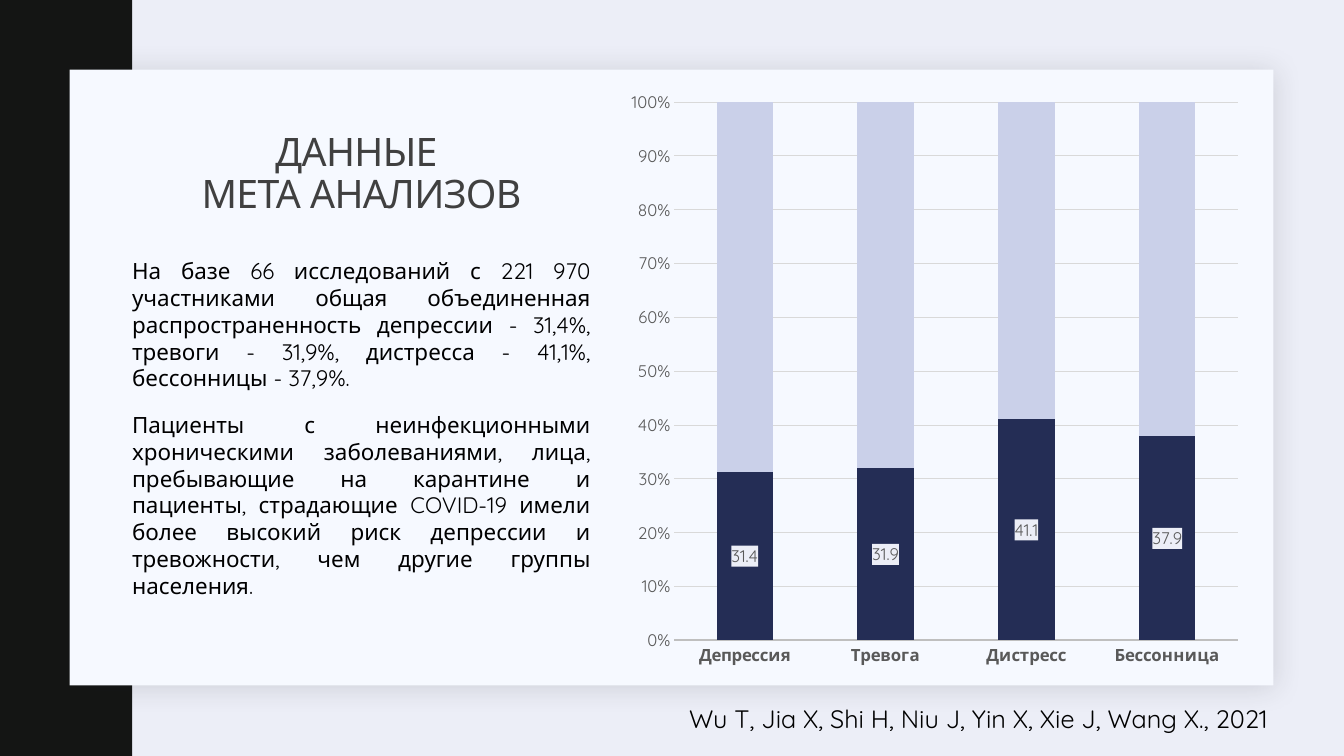
from copy import deepcopy

from lxml import etree
from pptx import Presentation
from pptx.chart.data import CategoryChartData
from pptx.dml.color import RGBColor
from pptx.enum.chart import XL_CHART_TYPE, XL_LABEL_POSITION, XL_TICK_MARK
from pptx.enum.shapes import MSO_SHAPE
from pptx.enum.text import MSO_ANCHOR, MSO_AUTO_SIZE, PP_ALIGN
from pptx.oxml import parse_xml
from pptx.oxml.ns import nsdecls, qn
from pptx.util import Inches, Pt

STACKED = XL_CHART_TYPE.COLUMN_STACKED_100
LABEL_CENTER = XL_LABEL_POSITION.CENTER
NO_TICK = XL_TICK_MARK.NONE
RECTANGLE = MSO_SHAPE.RECTANGLE
TOP, MIDDLE = MSO_ANCHOR.TOP, MSO_ANCHOR.MIDDLE
CENTER, JUSTIFY, RIGHT = PP_ALIGN.CENTER, PP_ALIGN.JUSTIFY, PP_ALIGN.RIGHT
NO_FIT = MSO_AUTO_SIZE.NONE

FONT = "Quicksand"
COLORS = {
    "background": "ECEEF7",
    "band": "141514",
    "card": "F6F9FF",
    "shadow": "1F2125",
    "title": "404040",
    "text": "000000",
    "axis_text": "595959",
    "axis_line": "BFBFBF",
    "grid": "D9D9D9",
    "affected": "242D55",
    "rest": "CAD0E9",
}


def color(name):
    return RGBColor.from_string(COLORS[name])


def write(frame, paragraphs, size, ink, align, anchor=TOP, line=1.0,
          before=0, after=0, spacing=0):
    frame.word_wrap = True
    frame.auto_size = NO_FIT
    frame.vertical_anchor = anchor
    for number, text in enumerate(paragraphs):
        paragraph = frame.add_paragraph() if number else frame.paragraphs[0]
        paragraph.text = text
        paragraph.alignment = align
        paragraph.line_spacing = line
        paragraph.space_before = Pt(before)
        paragraph.space_after = Pt(after)
        properties = paragraph._p.get_or_add_pPr()
        properties.set("marL", "0")
        properties.set("indent", "0")
        etree.SubElement(properties, qn("a:buNone"))
        for run in paragraph.runs:
            run.font.name = FONT
            run.font.size = Pt(size)
            run.font.color.rgb = color(ink)
            run._r.get_or_add_rPr().set("spc", str(spacing))
        for line_break in paragraph._p.findall(qn("a:br")):
            line_break.insert(0, deepcopy(paragraph.runs[0]._r.rPr))


prs = Presentation()
prs.slide_width = Inches(13.33)
prs.slide_height = Inches(7.5)
slide = prs.slides.add_slide(prs.slide_layouts[1])
slide.background.fill.solid()
slide.background.fill.fore_color.rgb = color("background")
title, findings = slide.placeholders

panels = {}
for name, box in (("band", (0, 0, 1.31, 7.5)), ("card", (0.69, 0.69, 11.94, 6.11))):
    panel = slide.shapes.add_shape(RECTANGLE, *map(Inches, box))
    panel.shadow.inherit = False
    panel.fill.solid()
    panel.fill.fore_color.rgb = color(name)
    panel.line.fill.background()
    slide.shapes._spTree.insert(2 + len(panels), panel._element)
    panels[name] = panel

panels["card"]._element.spPr.find(qn("a:effectLst")).append(parse_xml(
    f'<a:outerShdw {nsdecls("a")} blurRad="{Pt(20)}" dist="{Pt(2)}" dir="2700000" '
    f'algn="tl" rotWithShape="0"><a:srgbClr val="{COLORS["shadow"]}">'
    '<a:alpha val="15000"/></a:srgbClr></a:outerShdw>'))

for holder, box in ((title, (1.31, 1.03, 4.55, 1.41)), (findings, (1.31, 2.5, 4.55, 3.97))):
    holder.left, holder.top, holder.width, holder.height = map(Inches, box)

write(title.text_frame, ["ДАННЫЕ \nМЕТА АНАЛИЗОВ"], size=28, ink="title",
      align=CENTER, anchor=MIDDLE, line=0.9, spacing=-50)

findings.text_frame.margin_left = findings.text_frame.margin_right = 0
write(findings.text_frame, [
    "На базе 66 исследований с 221 970 участниками общая объединенная "
    "распространенность депрессии - 31,4%, тревоги - 31,9%, "
    "дистресса - 41,1%, бессонницы - 37,9%. ",
    "Пациенты с неинфекционными хроническими заболеваниями, лица, "
    "пребывающие на карантине и пациенты, страдающие COVID-19 имели более "
    "высокий риск депрессии и тревожности, чем другие группы населения. ",
], size=16, ink="text", align=JUSTIFY, before=12, after=2)

prevalence = CategoryChartData()
prevalence.categories = ["Депрессия", "Тревога", "Дистресс", "Бессонница"]
prevalence.add_series("Series 1", (31.4, 31.9, 41.1, 37.9))
prevalence.add_series("Series 2", (69, 68, 59, 62))
chart = slide.shapes.add_chart(
    STACKED, Inches(6.14), Inches(0.79), Inches(6.26), Inches(5.93), prevalence).chart
chart.has_title = False
chart.has_legend = False
chart.font.name = FONT
chart.font.size = Pt(10)
chart.font.color.rgb = color("text")

plot = chart.plots[0]
plot.gap_width = 150
plot.overlap = 100
plot.vary_by_categories = False
for series, name in zip(plot.series, ("affected", "rest")):
    series.format.fill.solid()
    series.format.fill.fore_color.rgb = color(name)

labels = plot.series[0].data_labels
labels.show_value = True
labels.position = LABEL_CENTER
conditions, percents = chart.category_axis, chart.value_axis
for part in (labels, conditions.tick_labels, percents.tick_labels):
    part.font.name = FONT
    part.font.size = Pt(12)
    part.font.color.rgb = color("axis_text")
    part.font.bold = part not in (labels, percents.tick_labels)
conditions.tick_labels.font.bold = True
percents.tick_labels.font.bold = False
labels._element.find(qn("c:txPr")).addprevious(parse_xml(
    f'<c:spPr {nsdecls("c", "a")}><a:solidFill>'
    f'<a:srgbClr val="{COLORS["background"]}"/></a:solidFill></c:spPr>'))

for axis in (conditions, percents):
    axis.major_tick_mark = axis.minor_tick_mark = NO_TICK
conditions.format.line.color.rgb = color("axis_line")
conditions.format.line.width = Pt(1.5)
percents.format.line.fill.background()
percents.tick_labels.number_format = "0%"
percents.tick_labels.number_format_is_linked = False
percents.major_gridlines.format.line.color.rgb = color("grid")
percents.major_gridlines.format.line.width = Pt(0.75)

citation = slide.shapes.add_textbox(Inches(2.98), Inches(6.93), Inches(9.83), Inches(0.4))
write(citation.text_frame, ["Wu T, Jia X, Shi H, Niu J, Yin X, Xie J, Wang X., 2021  "],
      size=18, ink="text", align=RIGHT)

prs.save("out.pptx")
